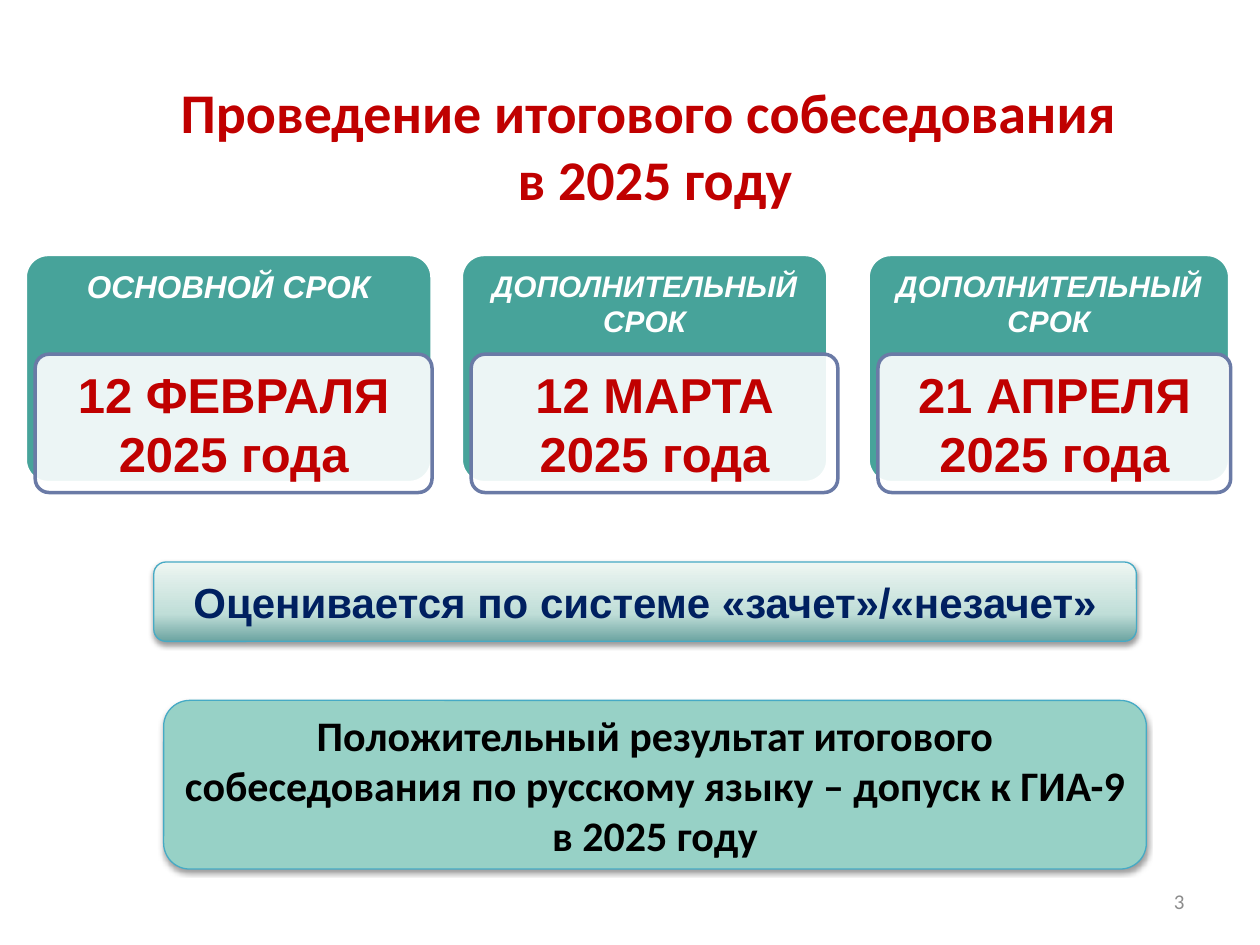
from lxml import etree
from pptx import Presentation
from pptx.dml.color import RGBColor
from pptx.enum.shapes import MSO_SHAPE
from pptx.enum.text import MSO_ANCHOR, PP_ALIGN
from pptx.oxml import parse_xml
from pptx.oxml.ns import nsdecls, qn
from pptx.util import Cm, Pt

ROUNDED = MSO_SHAPE.ROUNDED_RECTANGLE
TOP, MIDDLE = MSO_ANCHOR.TOP, MSO_ANCHOR.MIDDLE
CENTER, RIGHT = PP_ALIGN.CENTER, PP_ALIGN.RIGHT

WHITE = RGBColor(0xFF, 0xFF, 0xFF)
BLACK = RGBColor(0x00, 0x00, 0x00)
RED = RGBColor(0xC0, 0x00, 0x00)
NAVY = RGBColor(0x00, 0x20, 0x60)
GRAY = RGBColor(0x8C, 0x8C, 0x8C)
TEAL = RGBColor(0x47, 0xA3, 0x9A)
MINT = RGBColor(0x97, 0xD1, 0xC6)
SLATE = RGBColor(0x6A, 0x7A, 0xA6)
AQUA = RGBColor(0x46, 0xAA, 0xC5)


def write(box, text, font, size, color, bold=True, italic=False, align=CENTER, anchor=MIDDLE):
    frame = box.text_frame
    frame.text = text
    frame.word_wrap = True
    frame.vertical_anchor = anchor
    for para in frame.paragraphs:
        para.alignment = align
        for span in para.runs:
            span.font.name = font
            span.font.size = Pt(size)
            span.font.bold = bold
            span.font.italic = italic
            span.font.color.rgb = color


def add_panel(page, left, top, width, height, rounding, fill, line, line_width):
    panel = page.shapes.add_shape(ROUNDED, Cm(left), Cm(top), Cm(width), Cm(height))
    panel.adjustments[0] = rounding
    panel.shadow.inherit = False
    panel.fill.solid()
    panel.fill.fore_color.rgb = fill
    panel.line.color.rgb = line
    panel.line.width = Pt(line_width)
    return panel


deck = Presentation()
deck.slide_width, deck.slide_height = Cm(25.4), Cm(19.05)
page = deck.slides.add_slide(deck.slide_layouts[5])

title = page.shapes.title
title.left, title.top, title.width, title.height = Cm(3.3), Cm(0.74), Cm(19.81), Cm(4.34)
write(title, "Проведение итогового собеседования \vв 2025 году", "Calibri", 32, RED)

terms = [
    (0.51, 8.2, 8.0, "ОСНОВНОЙ СРОК", 18, "12 ФЕВРАЛЯ 2025 года"),
    (9.3, 7.39, 7.39, "ДОПОЛНИТЕЛЬНЫЙ СРОК", 17, "12 МАРТА 2025 года"),
    (17.5, 7.29, 7.11, "ДОПОЛНИТЕЛЬНЫЙ СРОК", 17, "21 АПРЕЛЯ\n2025 года"),
]
for left, term_width, date_width, term, size, date in terms:
    term_panel = add_panel(page, left, 5.13, term_width, 4.6, 0.1, TEAL, WHITE, 2)
    write(term_panel, term, "Arial", size, WHITE, italic=True, anchor=TOP)

    date_panel = add_panel(page, left + 0.2, 7.14, date_width, 2.79, 0.1, WHITE, SLATE, 2)
    fill_color = date_panel.fill._xPr.find(qn("a:solidFill"))[0]
    etree.SubElement(fill_color, qn("a:alpha"), val="90000")
    frame = date_panel.text_frame
    frame.margin_left = frame.margin_right = frame.margin_top = frame.margin_bottom = Cm(0.1)
    write(date_panel, date, "Arial", 28, RED)

result = add_panel(page, 3.3, 14.12, 19.81, 3.4, 0.154, MINT, AQUA, 0.75)
write(
    result,
    "Положительный результат итогового собеседования по русскому языку – допуск к ГИА-9 в 2025 году",
    "Calibri", 24, BLACK,
)

grading = add_panel(page, 3.1, 11.33, 19.81, 1.6, 0.154, MINT, AQUA, 0.75)
write(grading, "Оценивается по системе «зачет»/«незачет»", "Arial", 24, NAVY)
stops = "".join(
    f'<a:gs pos="{position * 1000}"><a:srgbClr val="{color}"/></a:gs>'
    for position, color in [(0, "6CA4A1"), (35, "C0DED8"), (100, "EEF6F2")]
)
gradient = parse_xml(
    f'<a:gradFill {nsdecls("a")} rotWithShape="1"><a:gsLst>{stops}</a:gsLst>'
    '<a:lin ang="16200000" scaled="0"/></a:gradFill>'
)
properties = grading._element.spPr
properties.replace(properties.find(qn("a:solidFill")), gradient)

for panel in (result, grading):
    panel._element.spPr.find(qn("a:effectLst")).append(parse_xml(
        f'<a:outerShdw {nsdecls("a")} blurRad="{Pt(3.1)}" dist="{Pt(1.6)}" dir="5400000" rotWithShape="0">'
        '<a:srgbClr val="000000"><a:alpha val="38000"/></a:srgbClr></a:outerShdw>'
    ))

page_number = page.shapes.add_textbox(Cm(18.21), Cm(17.65), Cm(5.92), Cm(1.02))
write(page_number, "3", "Calibri", 12, GRAY, bold=False, align=RIGHT)

deck.save("out.pptx")
